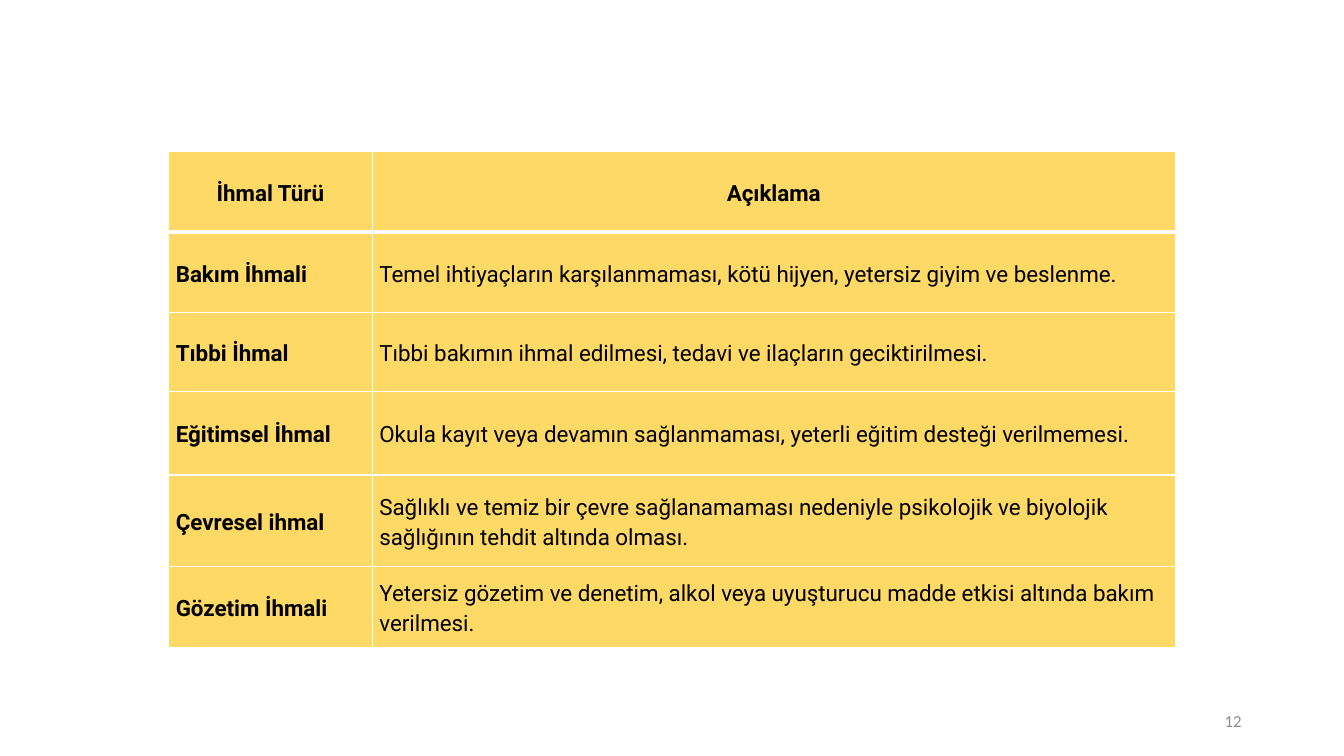
from lxml import etree
from pptx import Presentation
from pptx.dml.color import RGBColor
from pptx.enum.text import MSO_ANCHOR, PP_ALIGN
from pptx.oxml.ns import qn
from pptx.util import Cm, Pt

COLORS = {"cell": "FFD966", "border": "FFFFFF", "text": "000000", "number": "8C8C8C"}

HEADINGS = ("İhmal Türü", "Açıklama")
NEGLECT_TYPES = [
    ("Bakım İhmali", "Temel ihtiyaçların karşılanmaması, kötü hijyen, yetersiz giyim ve beslenme."),
    ("Tıbbi İhmal", "Tıbbi bakımın ihmal edilmesi, tedavi ve ilaçların geciktirilmesi."),
    ("Eğitimsel İhmal", "Okula kayıt veya devamın sağlanmaması, yeterli eğitim desteği verilmemesi."),
    ("Çevresel ihmal", "Sağlıklı ve temiz bir çevre sağlanamaması nedeniyle psikolojik ve biyolojik "
                       "sağlığının tehdit altında olması."),
    ("Gözetim İhmali", "Yetersiz gözetim ve denetim, alkol veya uyuşturucu madde etkisi altında "
                       "bakım verilmesi."),
]
ROW_HEIGHTS = (2.03, 2.03, 1.98, 2.11, 2.31, 2.03)
TYPE_COLUMN_WIDTH = 5.13


def write(frame, text, font="Roboto", size=16, color="text", bold=False,
          align=PP_ALIGN.LEFT, line_spacing=1.0):
    paragraph = frame.paragraphs[0]
    paragraph.alignment = align
    paragraph.line_spacing = line_spacing
    run = paragraph.add_run()
    run.text = text
    run.font.name = font
    run.font.size = Pt(size)
    run.font.bold = bold
    run.font.color.rgb = RGBColor.from_string(COLORS[color])


def set_borders(cell, **widths):
    """Draw the L, R, T and B borders, 1 pt wide unless given."""
    properties = cell._tc.get_or_add_tcPr()
    for position, side in enumerate("LRTB"):
        line = etree.Element(qn(f"a:ln{side}"), w=str(Pt(widths.get(side, 1))))
        fill = etree.SubElement(line, qn("a:solidFill"))
        etree.SubElement(fill, qn("a:srgbClr"), val=COLORS["border"])
        properties.insert(position, line)


def format_cell(cell):
    cell.fill.solid()
    cell.fill.fore_color.rgb = RGBColor.from_string(COLORS["cell"])
    cell.vertical_anchor = MSO_ANCHOR.MIDDLE
    cell.margin_left = cell.margin_right = Cm(0.18)
    cell.margin_top = cell.margin_bottom = 0


def add_neglect_table(slide, left, top, width):
    rows = [HEADINGS, *NEGLECT_TYPES]
    table = slide.shapes.add_table(len(rows), len(HEADINGS), Cm(left), Cm(top),
                                   Cm(width), Cm(sum(ROW_HEIGHTS))).table
    table.columns[0].width = Cm(TYPE_COLUMN_WIDTH)
    table.columns[1].width = Cm(width - TYPE_COLUMN_WIDTH)
    for r, (entries, height) in enumerate(zip(rows, ROW_HEIGHTS)):
        table.rows[r].height = Cm(height)
        for c, entry in enumerate(entries):
            cell = table.cell(r, c)
            format_cell(cell)
            set_borders(cell, T=3 if r == 1 else 1, B=3 if r == 0 else 1)
            write(cell.text_frame, entry, bold=r == 0 or c == 0, line_spacing=1.15,
                  align=PP_ALIGN.CENTER if r == 0 else PP_ALIGN.LEFT)


def add_page_number(slide, number, left, top, width, height):
    frame = slide.shapes.add_textbox(Cm(left), Cm(top), Cm(width), Cm(height)).text_frame
    frame.word_wrap = True
    frame.vertical_anchor = MSO_ANCHOR.MIDDLE
    write(frame, number, font="Calibri", size=12, color="number", align=PP_ALIGN.RIGHT)


def main():
    presentation = Presentation()
    presentation.slide_width = Cm(33.87)
    presentation.slide_height = Cm(19.05)
    slide = presentation.slides.add_slide(presentation.slide_layouts[6])
    add_neglect_table(slide, left=4.25, top=3.82, width=25.37)
    add_page_number(slide, "12", left=23.92, top=17.66, width=7.62, height=1.01)
    presentation.save("out.pptx")


if __name__ == "__main__":
    main()
